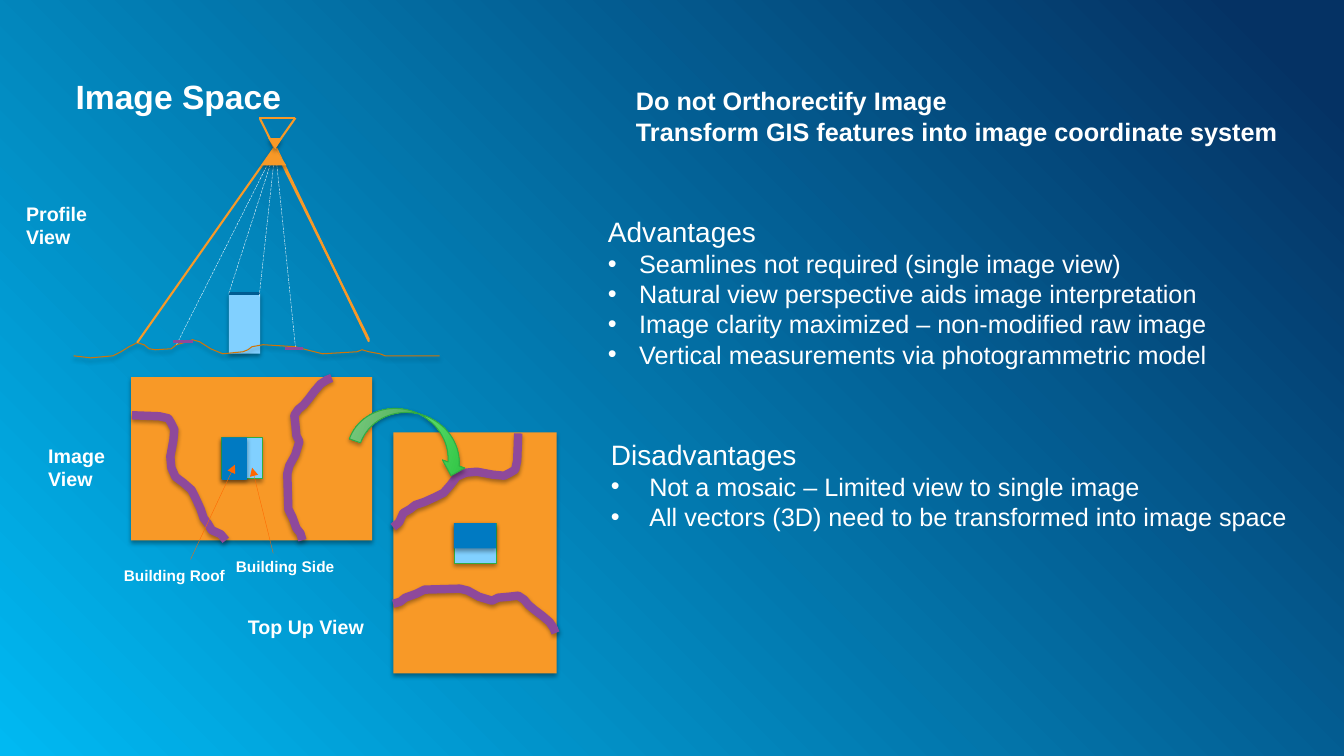
"""Build the Image Space slide comparing profile, image and top up views."""
from dataclasses import dataclass

from lxml import etree
from pptx import Presentation
from pptx.dml.color import RGBColor
from pptx.enum.dml import MSO_LINE
from pptx.enum.shapes import MSO_CONNECTOR, MSO_SHAPE
from pptx.enum.text import MSO_ANCHOR, MSO_AUTO_SIZE, PP_ALIGN
from pptx.oxml import parse_xml
from pptx.oxml.ns import qn
from pptx.util import Inches, Pt

STRAIGHT = MSO_CONNECTOR.STRAIGHT
LONG_DASH = MSO_LINE.LONG_DASH
RECTANGLE, TRIANGLE = MSO_SHAPE.RECTANGLE, MSO_SHAPE.ISOSCELES_TRIANGLE
CURVED_ARROW = MSO_SHAPE.CURVED_LEFT_ARROW
TOP, LEFT, NO_FIT = MSO_ANCHOR.TOP, PP_ALIGN.LEFT, MSO_AUTO_SIZE.NONE
NAMESPACE = 'xmlns:a="http://schemas.openxmlformats.org/drawingml/2006/main"'


@dataclass(frozen=True)
class Theme:
    """Colours, type sizes and line widths of the slide."""
    font: str = "Arial"
    text: str = "FFFFFF"
    sky: str = "00B9F2"
    night: str = "053264"
    land: str = "F89927"
    ground: str = "D07507"
    road: str = "8E499B"
    wall: str = "81D0FF"
    roof: str = "007AC2"
    roof_edge: str = "005C92"
    green: str = "31AB42"
    arrow_head: str = "23BE39"
    arrow_tail: str = "9CFDA3"
    pointer: str = "FF6600"
    title: int = 24
    heading: int = 20
    body: int = 18
    label: int = 14
    note: int = 11
    hair: float = 0.25
    thin: float = 0.75
    frame: float = 1.5
    bold: float = 2.25
    road_width: float = 6


THEME = Theme()
GRID_COLUMNS, GRID_ROWS = 13.33, 7.5

TITLE = ("Image Space", (0.75, 0.75, 11.84, 0.4))
LISTS = [
    ((6.03, 2.13, 7.3, 2.1), 0.31, "Advantages", [
        "Seamlines not required (single image view)",
        "Natural view perspective aids image interpretation",
        "Image clarity maximized – non-modified raw image",
        "Vertical measurements via photogrammetric model"]),
    ((6.06, 4.34, 6.96, 2.06), 0.38, "Disadvantages", [
        "Not a mosaic – Limited view to single image",
        "All vectors (3D) need to be transformed into image space"]),
]
LABELS = [
    (["Building Side"], (2.24, 5.48, 1.19, 0.29), THEME.note),
    (["Building Roof"], (1.13, 5.57, 1.21, 0.29), THEME.note),
    (["Profile", "View"], (0.16, 1.95, 0.81, 0.57), THEME.label),
    (["Image", "View"], (0.38, 4.35, 0.77, 0.57), THEME.label),
    (["Do not Orthorectify Image",
      "Transform GIS features into image coordinate system"],
     (6.21, 0.8, 6.63, 0.71), THEME.body),
    (["Top Up View"], (2.36, 6.05, 1.35, 0.34), THEME.label),
]
LENS = (2.73, 1.48)
RAY_ENDS = [(2.57, 2.95), (2.27, 2.91), (1.75, 3.42), (2.93, 3.44)]
FRAME_LINES = [((2.93, 1.17), (1.36, 3.4)), ((2.74, 1.47), (3.66, 3.39)),
               ((2.57, 1.17), (2.93, 1.17)), ((2.58, 1.18), (3.66, 3.37))]
ROAD_LINES = [((2.83, 3.46), (3.01, 3.46)), ((1.72, 3.39), (1.91, 3.39))]
POINTERS = [((1.89, 5.55), (2.33, 4.61)), ((2.71, 5.49), (2.5, 4.64))]
TOWER = (2.27, 2.91, 0.31, 0.6)
CAMERA = [((2.59, 1.46, 0.25, 0.18), 0), ((2.66, 1.37, 0.14, 0.11), 180)]
TERRAIN = [
    (0.73, 3.53), (0.9, 3.55), (1.12, 3.53), (1.2, 3.49), (1.28, 3.44), (1.36, 3.4),
    (1.43, 3.42), (1.48, 3.46), (1.54, 3.47), (1.7, 3.46), (1.75, 3.42), (1.86, 3.39),
    (1.91, 3.37), (1.98, 3.39), (2.09, 3.46), (2.21, 3.51), (2.41, 3.49), (2.46, 3.47),
    (2.5, 3.44), (2.61, 3.42), (2.93, 3.44), (3.04, 3.47), (3.2, 3.51), (3.54, 3.49),
    (3.59, 3.47), (3.66, 3.49), (3.77, 3.51), (3.82, 3.53), (4.36, 3.53)]
ROADS = [
    [(3.29, 3.75), (3.24, 3.77), (3.18, 3.81), (3.12, 3.88), (3.06, 3.96), (3.01, 4.02),
     (2.96, 4.06), (2.92, 4.12), (2.93, 4.21), (2.94, 4.32), (2.97, 4.38), (2.93, 4.51),
     (2.87, 4.62), (2.85, 4.7), (2.86, 5.05), (2.9, 5.13), (2.94, 5.24), (2.98, 5.29),
     (3, 5.36)],
    [(1.31, 4.12), (1.58, 4.13), (1.67, 4.15), (1.7, 4.2), (1.73, 4.26), (1.72, 4.37),
     (1.69, 4.53), (1.7, 4.64), (1.74, 4.73), (1.82, 4.79), (1.9, 4.86), (1.94, 4.94),
     (1.99, 5.05), (2.02, 5.14), (2.06, 5.19), (2.1, 5.26), (2.19, 5.3), (2.24, 5.36)],
]
PLOTS = [((1.3, 3.74, 2.39, 1.62), THEME.land, None),
         ((2.2, 4.34, 0.4, 0.41), THEME.wall, THEME.green),
         ((2.2, 4.34, 0.25, 0.42), THEME.roof, None)]
IMAGE_CENTRE, TOP_UP_CENTRE = (2.5, 4.55), (4.71, 5.49)
TRANSFER_ARROW = ((3.87, 3.74, 0.47, 1.19), 289.9)

deck = Presentation()
deck.slide_width, deck.slide_height = Inches(GRID_COLUMNS), Inches(GRID_ROWS)
COLUMN, ROW = deck.slide_width / GRID_COLUMNS, deck.slide_height / GRID_ROWS
page = deck.slides.add_slide(deck.slide_layouts[3])


def place(*numbers):
    """Turn alternating grid columns and rows into slide lengths."""
    return [round(number * (ROW if index % 2 else COLUMN))
            for index, number in enumerate(numbers)]


def colour(code):
    return RGBColor.from_string(code)


def set_gradient(fill, first, last, end):
    fill.gradient()
    for stop, code, position in zip(fill.gradient_stops, (first, last), (0, end)):
        stop.color.rgb, stop.position = colour(code), position


def add_shadow(shape):
    shape.shadow.inherit = False
    effects = shape._element.spPr.find(qn("a:effectLst"))
    effects.append(parse_xml(
        f'<a:outerShdw {NAMESPACE} blurRad="40000" dist="23000" dir="5400000" rotWithShape="0">'
        '<a:srgbClr val="000000"><a:alpha val="35000"/></a:srgbClr></a:outerShdw>'))


def add_solid(shapes, kind, box, fill, edge=None, rotation=0):
    shape = shapes.add_shape(kind, *place(*box))
    shape.rotation = rotation
    shape.fill.solid()
    shape.fill.fore_color.rgb = colour(fill)
    if edge:
        shape.line.color.rgb, shape.line.width = colour(edge), Pt(THEME.thin)
    else:
        shape.line.fill.background()
    add_shadow(shape)
    return shape


def add_path(shapes, points, code, width):
    builder = shapes.build_freeform(*place(*points[0]))
    builder.add_line_segments([place(*point) for point in points[1:]], close=False)
    shape = builder.convert_to_shape()
    shape.fill.background()
    shape.line.color.rgb, shape.line.width = colour(code), Pt(width)
    add_shadow(shape)


def add_line(start, end, code, width, dash=None, arrow=False):
    connector = page.shapes.add_connector(STRAIGHT, *place(*start, *end))
    connector.line.color.rgb, connector.line.width = colour(code), Pt(width)
    if dash:
        connector.line.dash_style = dash
    if arrow:
        etree.SubElement(connector.line._get_or_add_ln(), qn("a:tailEnd"), type="triangle")
    etree.SubElement(connector._element.spPr, qn("a:effectLst"))


def format_paragraph(para, size, bold=False):
    para.alignment, para.space_before = LEFT, Pt(0)
    for span in para.runs:
        span.font.name, span.font.size, span.font.bold = THEME.font, Pt(size), bold
        span.font.color.rgb = colour(THEME.text)


def fill_placeholder(holder, box, lines):
    holder.left, holder.top, holder.width, holder.height = place(*box)
    frame = holder.text_frame
    frame.text = "\n".join(lines)
    frame.margin_left = frame.margin_right = frame.margin_top = frame.margin_bottom = 0
    frame.vertical_anchor, frame.auto_size, frame.word_wrap = TOP, NO_FIT, True
    return frame.paragraphs


def add_view(centre, turned):
    """Draw the mapped area, turned a quarter clockwise when asked."""
    def move(point):
        across, down = point[0] - IMAGE_CENTRE[0], point[1] - IMAGE_CENTRE[1]
        if turned:
            across, down = -down, across
        return centre[0] + across, centre[1] + down

    shapes = page.shapes.add_group_shape().shapes
    for (left, top, width, height), fill, edge in PLOTS:
        middle = move((left + width / 2, top + height / 2))
        box = (middle[0] - width / 2, middle[1] - height / 2, width, height)
        add_solid(shapes, RECTANGLE, box, fill, edge, 90 if turned else 0)
    for road in ROADS:
        add_path(shapes, [move(point) for point in road], THEME.road, THEME.road_width)


set_gradient(page.background.fill, THEME.sky, THEME.night, 0.95)
linear = page._element.find(".//" + qn("a:lin"))
linear.getparent().replace(linear, parse_xml(
    f'<a:path {NAMESPACE} path="circle"><a:fillToRect t="100000" r="100000"/></a:path>'))

title, *bodies = page.placeholders
format_paragraph(fill_placeholder(title, TITLE[1], [TITLE[0]])[0], THEME.title, True)
for body, (box, indent, heading, items) in zip(bodies, LISTS):
    for index, para in enumerate(fill_placeholder(body, box, [heading, *items])):
        format_paragraph(para, THEME.body if index else THEME.heading)
        hang = Inches(indent) if index else 0
        properties = para._p.get_or_add_pPr()
        properties.set("marL", str(hang))
        properties.set("indent", str(-hang))
        bullet = etree.SubElement(properties, qn("a:buChar" if index else "a:buNone"))
        if index:
            bullet.set("char", "•")

for lines, box, size in LABELS:
    frame = page.shapes.add_textbox(*place(*box)).text_frame
    frame.text, frame.word_wrap = "\n".join(lines), False
    for para in frame.paragraphs:
        format_paragraph(para, size, True)

add_solid(page.shapes, RECTANGLE, TOWER, THEME.wall)
add_path(page.shapes, TERRAIN, THEME.ground, THEME.thin)
add_line(TOWER[:2], (TOWER[0] + TOWER[2], TOWER[1]), THEME.roof_edge, THEME.bold)
for end in RAY_ENDS:
    add_line(LENS, end, THEME.text, THEME.hair, LONG_DASH)
for start, end in ROAD_LINES:
    add_line(start, end, THEME.road, THEME.bold)
for start, end in FRAME_LINES:
    add_line(start, end, THEME.land, THEME.frame)
for box, rotation in CAMERA:
    add_solid(page.shapes, TRIANGLE, box, THEME.land, rotation=rotation)
add_view(IMAGE_CENTRE, False)
add_view(TOP_UP_CENTRE, True)
box, rotation = TRANSFER_ARROW
arrow = add_solid(page.shapes, CURVED_ARROW, box, THEME.arrow_head, THEME.green, rotation)
set_gradient(arrow.fill, THEME.arrow_head, THEME.arrow_tail, 1)
arrow.fill.gradient_angle = 90
for start, end in POINTERS:
    add_line(start, end, THEME.pointer, THEME.hair, arrow=True)

deck.save("out.pptx")
